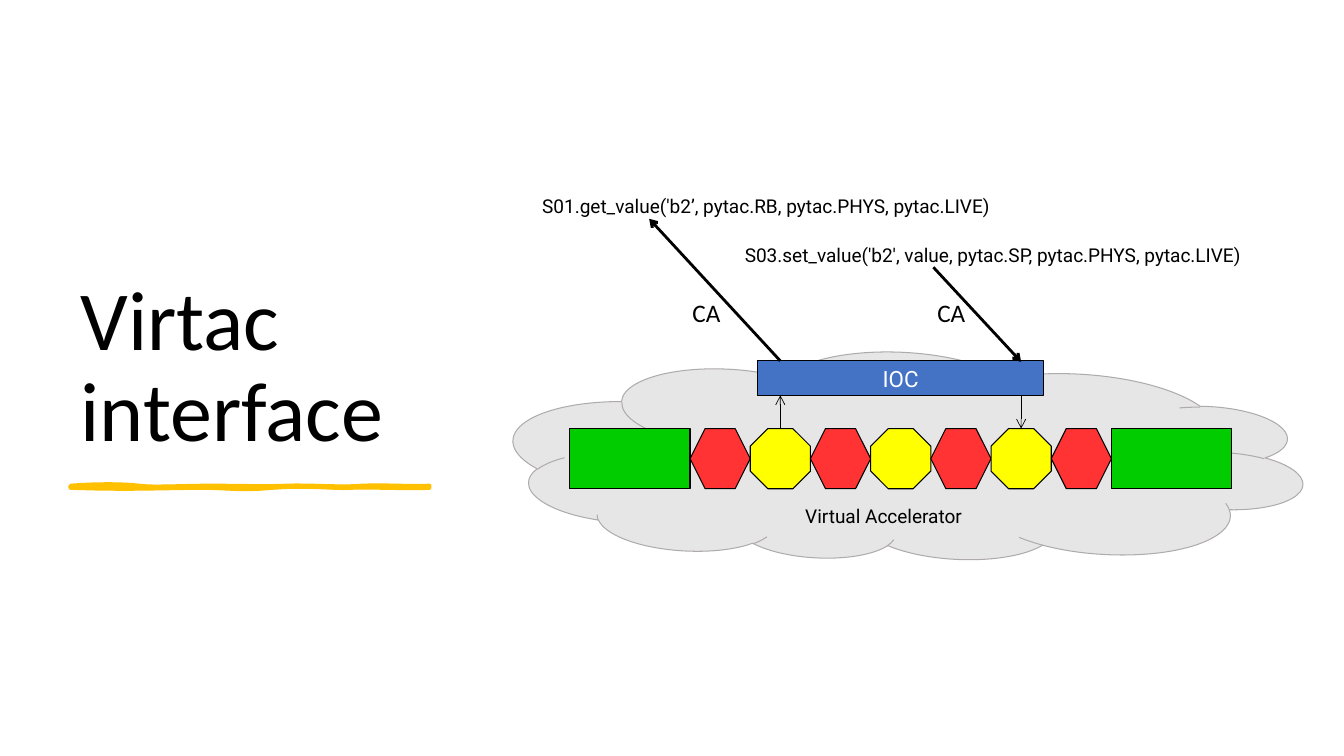
from lxml import etree
from pptx import Presentation
from pptx.dml.color import RGBColor
from pptx.enum.shapes import MSO_CONNECTOR, MSO_SHAPE as Preset
from pptx.enum.text import MSO_ANCHOR as Anchor, MSO_AUTO_SIZE as AutoSize, PP_ALIGN as Align
from pptx.oxml.ns import qn
from pptx.util import Pt

BLACK, WHITE = "000000", "FFFFFF"
GOLD, BLUE = "FFC000", "4472C4"
GREEN, RED, YELLOW = "00CC00", "FF3333", "FFFF00"
CLOUD_FILL, CLOUD_LINE = "E7E6E6", "AFABAB"


def color(hex_string):
    return RGBColor.from_string(hex_string)


def paint(shape, fill, line, width=0):
    shape.shadow.inherit = False
    shape.fill.solid()
    shape.fill.fore_color.rgb = color(fill)
    shape.line.color.rgb = color(line)
    shape.line.width = Pt(width)


def add_preset(slide, preset, box, fill, line=BLACK):
    shape = slide.shapes.add_shape(preset, *(Pt(value) for value in box))
    paint(shape, fill, line)
    return shape


def write(shape, text, font, size, hex_color=BLACK, align=Align.LEFT):
    paragraph = shape.text_frame.paragraphs[0]
    paragraph.alignment = align
    run = paragraph.add_run()
    run.text = text
    run.font.name = font
    run.font.size = Pt(size)
    run.font.color.rgb = color(hex_color)
    return paragraph


def add_label(slide, box, text, font="Roboto", size=13.6, align=Align.LEFT, wrap=False):
    shape = slide.shapes.add_textbox(*(Pt(value) for value in box))
    shape.text_frame.word_wrap = wrap
    shape.text_frame.auto_size = AutoSize.SHAPE_TO_FIT_TEXT
    return write(shape, text, font, size, align=align)


def add_arrow(slide, start, end, width=0):
    connector = slide.shapes.add_connector(
        MSO_CONNECTOR.STRAIGHT, *(Pt(value) for value in (*start, *end)))
    connector.line.color.rgb = color(BLACK)
    connector.line.width = Pt(width)
    line = connector.line._get_or_add_ln()
    etree.SubElement(line, qn("a:tailEnd"), type="arrow")
    etree.SubElement(connector._element.spPr, qn("a:effectLst"))


def curve_points(start, curves, steps=8):
    """Sample a chain of cubic curves, each given as six coordinates."""
    points = [start]
    for x1, y1, x2, y2, x3, y3 in curves:
        x0, y0 = points[-1]
        for step in range(1, steps + 1):
            t = step / steps
            a, b, c, d = (1 - t) ** 3, 3 * t * (1 - t) ** 2, 3 * t * t * (1 - t), t ** 3
            points.append((a * x0 + b * x1 + c * x2 + d * x3,
                           a * y0 + b * y1 + c * y2 + d * y3))
    return points


def add_title(slide, left, top, size):
    # Title
    shape = slide.shapes.add_textbox(Pt(left), Pt(top), Pt(size), Pt(size))
    shape.text_frame.word_wrap = True
    shape.text_frame.vertical_anchor = Anchor.BOTTOM
    write(shape, "Virtac interface", "Calibri", 60).line_spacing = 0.9

    # Brush stroke below it, relative to its upper left end
    stroke = curve_points((0, 0), [
        (19, -1.4, 37, -1.4, 49, 0), (61, 1.4, 77, 0, 100, 0),
        (123, 0, 137, 0.7, 154, 0), (171, -0.7, 194, 1.4, 208, 0),
        (222, -0.7, 246, 0.7, 256.3, 0), (256.3, 0.7, 256.3, 1.4, 256.3, 1.4),
        (243, 2.2, 212, 0.7, 200, 1.4), (189, 2.2, 169, -0.7, 144, 1.4),
        (119, 3.6, 116, 1.4, 93, 1.4), (69, 1.4, 45, 2.9, 0, 1.4),
        (0, 1.4, 0, 0.7, 0, 0)])
    stroke_top = top + size + 15.1
    points = [(Pt(left + x), Pt(stroke_top + y)) for x, y in stroke]
    builder = slide.shapes.build_freeform(*points[0])
    builder.add_line_segments(points[1:], close=True)
    paint(builder.convert_to_shape(), GOLD, GOLD, 3)


def add_accelerator(slide, left, top, width, height):
    # Cloud
    cloud = add_preset(slide, Preset.CLOUD, (left, top, width, height),
                       CLOUD_FILL, CLOUD_LINE)
    cloud.rotation = 183

    # Row of elements: the rectangles are two units wide, the others one
    unit = 43
    row_left, row_top = left + 40.6, top + 53.6
    kinds = {"drift": (Preset.RECTANGLE, 2, GREEN),
             "bend": (Preset.HEXAGON, 1, RED),
             "quad": (Preset.OCTAGON, 1, YELLOW)}
    row = ["drift", *["bend", "quad"] * 3, "bend", "drift"]
    x = row_left
    quad_centers = []
    for kind in row:
        preset, units, fill = kinds[kind]
        add_preset(slide, preset, (x, row_top, units * unit, unit), fill)
        if kind == "quad":
            quad_centers.append(x + unit / 2)
        x += units * unit
    add_label(slide, (left + 161.5, top + 104, 206.6, 23), "Virtual Accelerator",
              align=Align.CENTER, wrap=True).space_after = Pt(7.8)

    # Server box
    ioc_top, ioc_height = top + 5.3, 24.6
    ioc_bottom = ioc_top + ioc_height
    ioc = add_preset(slide, Preset.RECTANGLE,
                     (left + 174.9, ioc_top, 204.2, ioc_height), BLUE)
    ioc.text_frame.word_wrap = False
    ioc.text_frame.vertical_anchor = Anchor.MIDDLE
    write(ioc, "IOC", "Roboto", 16, WHITE, Align.CENTER)

    # Reading goes up from the first yellow element, setting goes down to the last
    read_x, set_x = quad_centers[0], quad_centers[-1]
    add_arrow(slide, (read_x, row_top), (read_x, ioc_bottom), 0.5)
    add_arrow(slide, (set_x, ioc_bottom), (set_x, row_top), 0.5)
    add_arrow(slide, (read_x, ioc_top), (left + 97.4, top - 96.2))
    add_arrow(slide, (left + 300.4, top - 61.6), (set_x, ioc_top + 0.7))


def add_calls(slide, left, top):
    # Calls
    calls = [(0, 0, 350.6, "S01.get_value('b2’, pytac.RB, pytac.PHYS, pytac.LIVE)"),
             (144.7, 34.6, 387.4,
              "S03.set_value('b2', value, pytac.SP, pytac.PHYS, pytac.LIVE)")]
    for dx, dy, width, text in calls:
        add_label(slide, (left + dx, top + dy, width, 23), text).space_after = Pt(7.8)

    # Protocol labels on the arrows
    for dx in (107.3, 282.2):
        add_label(slide, (left + dx, top + 73.4, 34.6, 29), "CA", "Calibri", 18)


def main():
    presentation = Presentation()
    presentation.slide_width, presentation.slide_height = Pt(960), Pt(540)
    slide = presentation.slides.add_slide(presentation.slide_layouts[6])
    add_title(slide, 50.4, 50.4, 281.5)
    add_accelerator(slide, 366.3, 252.5, 564.5, 149.8)
    add_calls(slide, 380.2, 135.4)
    presentation.save("out.pptx")


if __name__ == "__main__":
    main()
